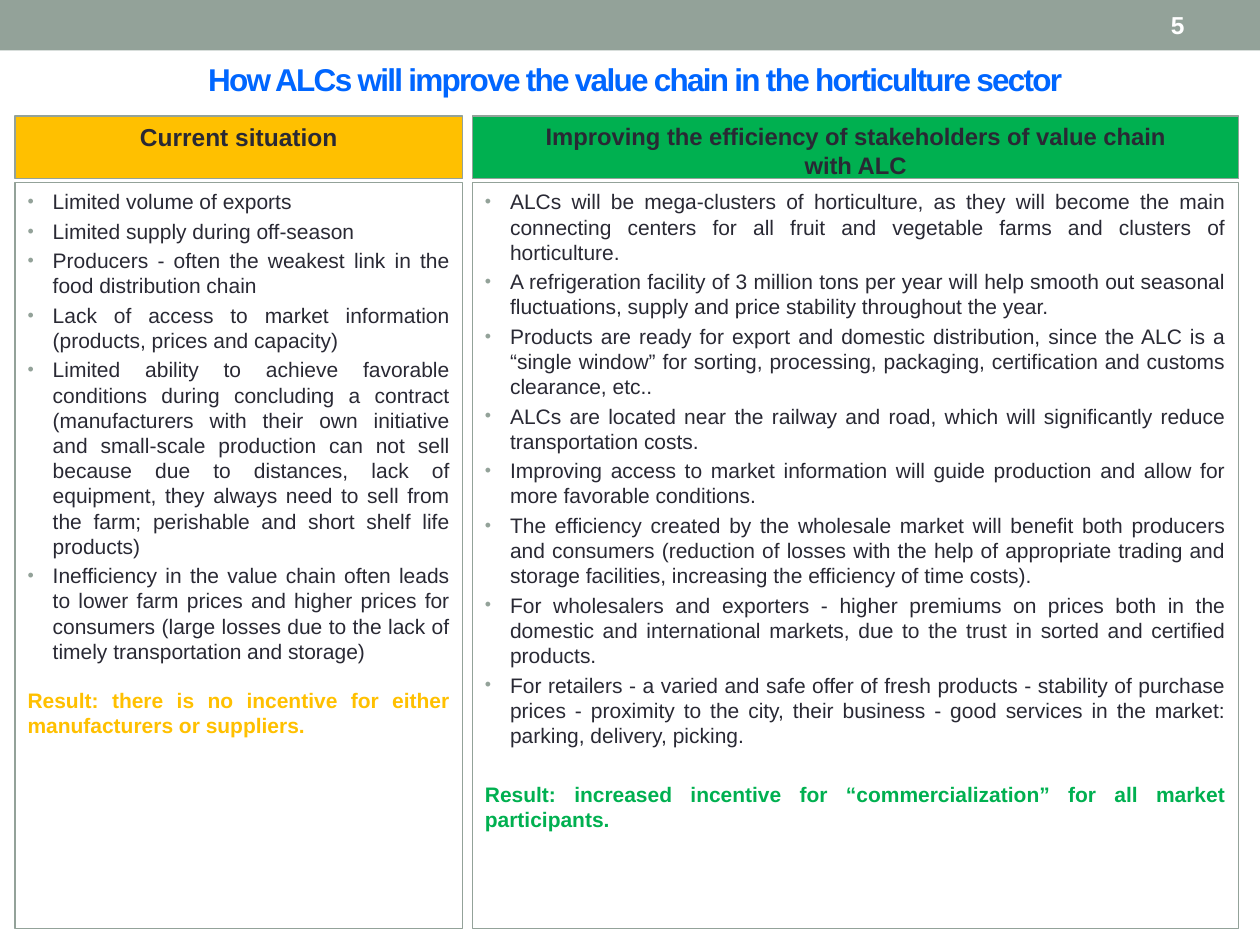
from pptx import Presentation
from pptx.dml.color import RGBColor as RGB
from pptx.enum.shapes import MSO_SHAPE as SHAPE
from pptx.enum.text import MSO_ANCHOR as ANCHOR, PP_ALIGN as ALIGN
from pptx.oxml.ns import qn
from pptx.util import Inches, Pt
from lxml import etree

COLORS = {"sage": "93A299", "white": "FFFFFF", "blue": "0066FF",
          "ink": "292934", "amber": "FFC000", "green": "00B050"}


class SlideBuilder:
    font = "Arial"
    indent = 0.2

    def __init__(self, slide):
        self.slide = slide

    def color(self, name):
        return RGB.from_string(COLORS[name])

    def box(self, x, y, w, h, fill=None, line=None):
        sp = self.slide.shapes.add_shape(
            SHAPE.RECTANGLE, Inches(x), Inches(y), Inches(w), Inches(h))
        sp.shadow.inherit = False
        if fill:
            sp.fill.solid()
            sp.fill.fore_color.rgb = self.color(fill)
        else:
            sp.fill.background()
        if line:
            sp.line.color.rgb = self.color(line)
            sp.line.width = Pt(0.75)
        else:
            sp.line.fill.background()
        sp.text_frame.word_wrap = True
        sp.text_frame.vertical_anchor = ANCHOR.TOP
        return sp

    def set_text(self, p, text, size, color, align, bold=False, before=0):
        for name, value in {"alignment": align, "space_before": Pt(before),
                            "line_spacing": 1.0}.items():
            setattr(p, name, value)
        p.text = text
        for r in p.runs:
            for name, value in {"name": self.font, "size": Pt(size),
                                "bold": bold}.items():
                setattr(r.font, name, value)
            r.font.color.rgb = self.color(color)

    def label(self, x, y, w, h, text, size, color, align, spacing=0):
        tb = self.slide.shapes.add_textbox(
            Inches(x), Inches(y), Inches(w), Inches(h))
        tf = tb.text_frame
        tf.word_wrap = True
        tf.vertical_anchor = ANCHOR.MIDDLE
        p = tf.paragraphs[0]
        self.set_text(p, text, size, color, align, bold=True)
        if spacing:
            p.runs[0]._r.get_or_add_rPr().set("spc", str(spacing * 100))

    def heading(self, x, y, w, h, text, size, fill):
        sp = self.box(x, y, w, h, fill, "sage")
        self.set_text(sp.text_frame.paragraphs[0], text, size, "ink",
                      ALIGN.CENTER, bold=True, before=size * 0.2)

    def bullet(self, p):
        pPr = p._p.get_or_add_pPr()
        pPr.set("marL", str(Inches(self.indent)))
        pPr.set("indent", str(-Inches(self.indent)))
        clr = etree.SubElement(pPr, qn("a:buClr"))
        etree.SubElement(clr, qn("a:srgbClr"), val=COLORS["sage"])
        etree.SubElement(pPr, qn("a:buSzPct"), val="85000")
        etree.SubElement(pPr, qn("a:buFont"), typeface=self.font)
        etree.SubElement(pPr, qn("a:buChar"), char="•")

    def panel(self, x, y, w, h, points, result, color, gap):
        tf = self.box(x, y, w, h, line="sage").text_frame
        for i, text in enumerate(points):
            p = tf.add_paragraph() if i else tf.paragraphs[0]
            self.set_text(p, text, 12, "ink", ALIGN.JUSTIFY, before=2.4)
            self.bullet(p)
        self.set_text(tf.add_paragraph(), result, 12, color, ALIGN.JUSTIFY,
                      bold=True, before=gap)


CURRENT = [
    "Limited volume of exports",
    "Limited supply during off-season",
    "Producers - often the weakest link in the food distribution chain",
    "Lack of access to market information (products, prices and capacity)",
    "Limited ability to achieve favorable conditions during concluding a contract "
    "(manufacturers with their own initiative and small-scale production can not sell "
    "because due to distances, lack of equipment, they always need to sell from the "
    "farm; perishable and short shelf life products)",
    "Inefficiency in the value chain often leads to lower farm prices and higher prices "
    "for consumers (large losses due to the lack of timely transportation and storage)",
]
WITH_ALC = [
    "ALCs will be mega-clusters of horticulture, as they will become the main connecting "
    "centers for all fruit and vegetable farms and clusters of horticulture.",
    "A refrigeration facility of 3 million tons per year will help smooth out seasonal "
    "fluctuations, supply and price stability throughout the year.",
    "Products are ready for export and domestic distribution, since the ALC is a “single "
    "window” for sorting, processing, packaging, certification and customs clearance, etc..",
    "ALCs are located near the railway and road, which will significantly reduce "
    "transportation costs.",
    "Improving access to market information will guide production and allow for more "
    "favorable conditions.",
    "The efficiency created by the wholesale market will benefit both producers and "
    "consumers (reduction of losses with the help of appropriate trading and storage "
    "facilities, increasing the efficiency of time costs).",
    "For wholesalers and exporters - higher premiums on prices both in the domestic and "
    "international markets, due to the trust in sorted and certified products.",
    "For retailers - a varied and safe offer of fresh products - stability of purchase "
    "prices - proximity to the city, their business - good services in the market: "
    "parking, delivery, picking.",
]
# left, width, heading, heading size, colour, points, result, gap above result
COLUMNS = [
    (0.12, 3.55, "Current situation", 14, "amber", CURRENT,
     "Result: there is no incentive for either manufacturers or suppliers.", 13.6),
    (3.75, 6.08, "Improving the efficiency of stakeholders of value chain\vwith ALC",
     13.6, "green", WITH_ALC,
     "Result: increased incentive for “commercialization” for all market participants.",
     19.2),
]


def main():
    prs = Presentation()
    prs.slide_width, prs.slide_height = Inches(10), Inches(7.5)
    s = SlideBuilder(prs.slides.add_slide(prs.slide_layouts[6]))

    # Top band, slide number and title
    s.box(0, 0, 10, 0.4, fill="sage")
    s.label(8.33, 0.02, 1.17, 0.36, "5", 14, "white", ALIGN.RIGHT)
    s.label(0.25, 0.38, 9.58, 0.5,
            "How ALCs will improve the value chain in the horticulture sector",
            18, "blue", ALIGN.CENTER, spacing=-1)

    # Two columns: heading above a bulleted panel
    for x, w, title, size, color, points, result, gap in COLUMNS:
        s.heading(x, 0.92, w, 0.5, title, size, color)
        s.panel(x, 1.45, w, 5.92, points, result, color, gap)

    prs.save("out.pptx")


if __name__ == "__main__":
    main()
